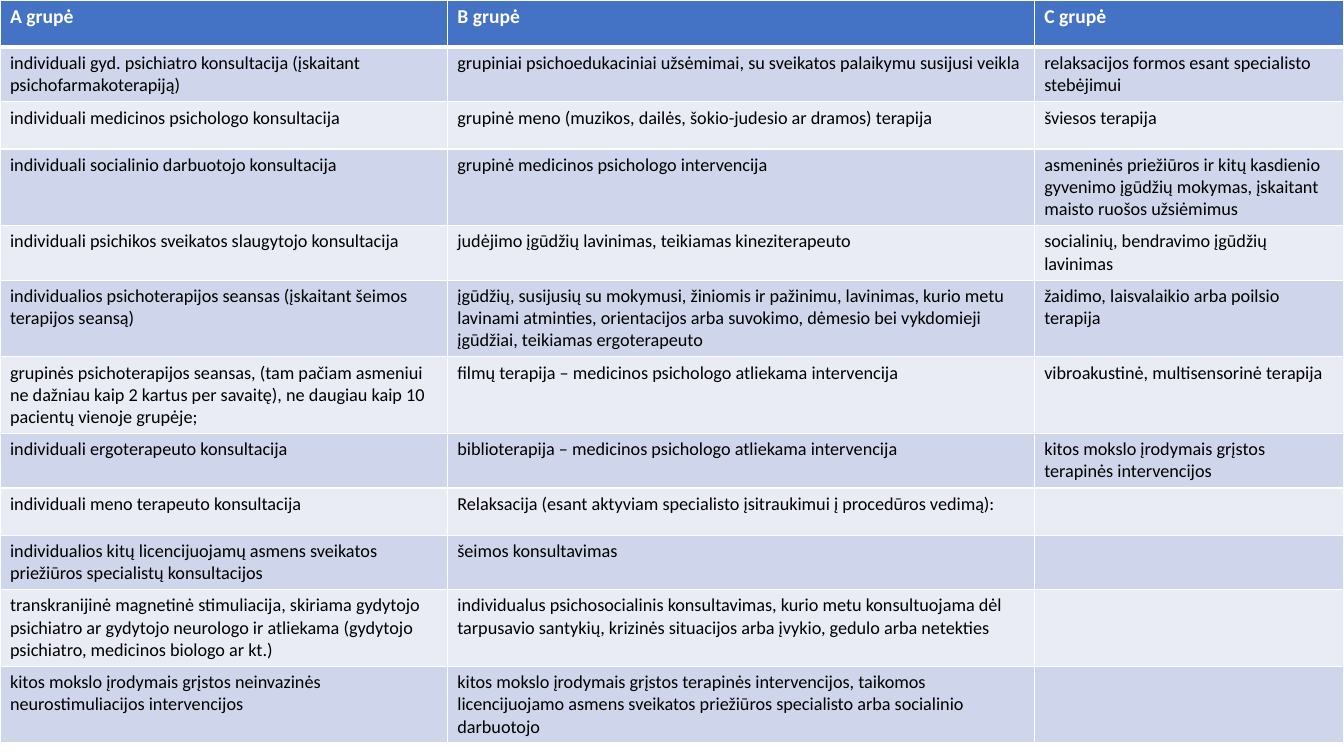
from lxml import etree
from pptx import Presentation
from pptx import util as u
from pptx.dml import color
from pptx.oxml import ns

HEADER = ("A grupė", "B grupė", "C grupė")
SERVICES = [
    ("individuali gyd. psichiatro konsultacija (įskaitant psichofarmakoterapiją)",
     "grupiniai psichoedukaciniai užsėmimai, su sveikatos palaikymu susijusi veikla",
     "relaksacijos formos esant specialisto stebėjimui"),
    ("individuali medicinos psichologo konsultacija",
     "grupinė meno (muzikos, dailės, šokio-judesio ar dramos) terapija",
     "šviesos terapija"),
    ("individuali socialinio darbuotojo konsultacija",
     "grupinė medicinos psichologo intervencija",
     "asmeninės priežiūros ir kitų kasdienio gyvenimo įgūdžių mokymas, "
     "įskaitant maisto ruošos užsiėmimus"),
    ("individuali psichikos sveikatos slaugytojo konsultacija",
     "judėjimo įgūdžių lavinimas, teikiamas kineziterapeuto",
     "socialinių, bendravimo įgūdžių lavinimas"),
    ("individualios psichoterapijos seansas (įskaitant šeimos terapijos seansą)",
     "įgūdžių, susijusių su mokymusi, žiniomis ir pažinimu, lavinimas, kurio metu "
     "lavinami atminties, orientacijos arba suvokimo, dėmesio bei vykdomieji "
     "įgūdžiai, teikiamas ergoterapeuto",
     "žaidimo, laisvalaikio arba poilsio terapija"),
    ("grupinės psichoterapijos seansas, (tam pačiam asmeniui ne dažniau kaip "
     "2 kartus per savaitę), ne daugiau kaip 10 pacientų vienoje grupėje;",
     "filmų terapija – medicinos psichologo atliekama intervencija",
     "vibroakustinė, multisensorinė terapija"),
    ("individuali ergoterapeuto konsultacija",
     "biblioterapija – medicinos psichologo atliekama intervencija",
     "kitos mokslo įrodymais grįstos terapinės intervencijos"),
    ("individuali meno terapeuto konsultacija",
     "Relaksacija (esant aktyviam specialisto įsitraukimui į procedūros vedimą):",
     ""),
    ("individualios kitų licencijuojamų asmens sveikatos priežiūros specialistų "
     "konsultacijos",
     "šeimos konsultavimas",
     ""),
    ("transkranijinė magnetinė stimuliacija, skiriama gydytojo psichiatro ar "
     "gydytojo neurologo ir atliekama (gydytojo psichiatro, medicinos biologo ar kt.)",
     "individualus psichosocialinis konsultavimas, kurio metu konsultuojama dėl "
     "tarpusavio santykių, krizinės situacijos arba įvykio, gedulo arba netekties",
     ""),
    ("kitos mokslo įrodymais grįstos neinvazinės neurostimuliacijos intervencijos",
     "kitos mokslo įrodymais grįstos terapinės intervencijos, taikomos "
     "licencijuojamo asmens sveikatos priežiūros specialisto arba socialinio "
     "darbuotojo",
     ""),
]

THEME = {
    "font": "Calibri", "header_size": 14, "body_size": 13,
    "header_text": "FFFFFF", "body_text": "000000",
    "header_fill": "4472C4", "bands": ("CFD5EA", "E9EBF5"),
    "border": "FFFFFF", "thin": 1, "thick": 3,
}

PX = 9525  # EMU per px, 96 px to the inch
SLIDE_W, SLIDE_H = 1280, 720
COLUMN_WIDTHS = (426, 559, 295)
ROW_H, SHORT_ROW_H = 45, 36
SHORT_ROW = 10


def set_borders(cell, top, bottom):
    tc_pr = cell._tc.get_or_add_tcPr()
    sides = {"L": THEME["thin"], "R": THEME["thin"], "T": top, "B": bottom}
    for side, width in sides.items():
        ln = etree.SubElement(tc_pr, ns.qn(f"a:ln{side}"), w=str(u.Pt(width)))
        fill = etree.SubElement(ln, ns.qn("a:solidFill"))
        etree.SubElement(fill, ns.qn("a:srgbClr"), val=THEME["border"])


def fill_cell(cell, content, row):
    is_header = row == 0
    thin, thick = THEME["thin"], THEME["thick"]
    set_borders(cell, thick if row == 1 else thin, thick if is_header else thin)
    cell.fill.solid()
    cell.fill.fore_color.rgb = color.RGBColor.from_string(
        THEME["header_fill"] if is_header else THEME["bands"][(row - 1) % 2])
    p = cell.text_frame.paragraphs[0]
    kind = "header" if is_header else "body"
    if not content:
        p.font.size = u.Pt(THEME["body_size"])
        return
    r = p.add_run()
    r.text = content
    r.font.name = THEME["font"]
    r.font.size = u.Pt(THEME[f"{kind}_size"])
    r.font.bold = is_header
    r.font.color.rgb = color.RGBColor.from_string(THEME[f"{kind}_text"])


def main():
    prs = Presentation()
    prs.slide_width, prs.slide_height = SLIDE_W * PX, SLIDE_H * PX
    s = prs.slides.add_slide(prs.slide_layouts[6])

    rows = [HEADER, *SERVICES]
    heights = [SHORT_ROW_H if i == SHORT_ROW else ROW_H for i in range(len(rows))]
    table = s.shapes.add_table(len(rows), len(HEADER), 0, 0,
                               SLIDE_W * PX, sum(heights) * PX).table
    for column, width in zip(table.columns, COLUMN_WIDTHS):
        column.width = width * PX
    for i, (contents, height) in enumerate(zip(rows, heights)):
        table.rows[i].height = height * PX
        for j, content in enumerate(contents):
            fill_cell(table.cell(i, j), content, i)

    prs.save("out.pptx")


if __name__ == "__main__":
    main()
